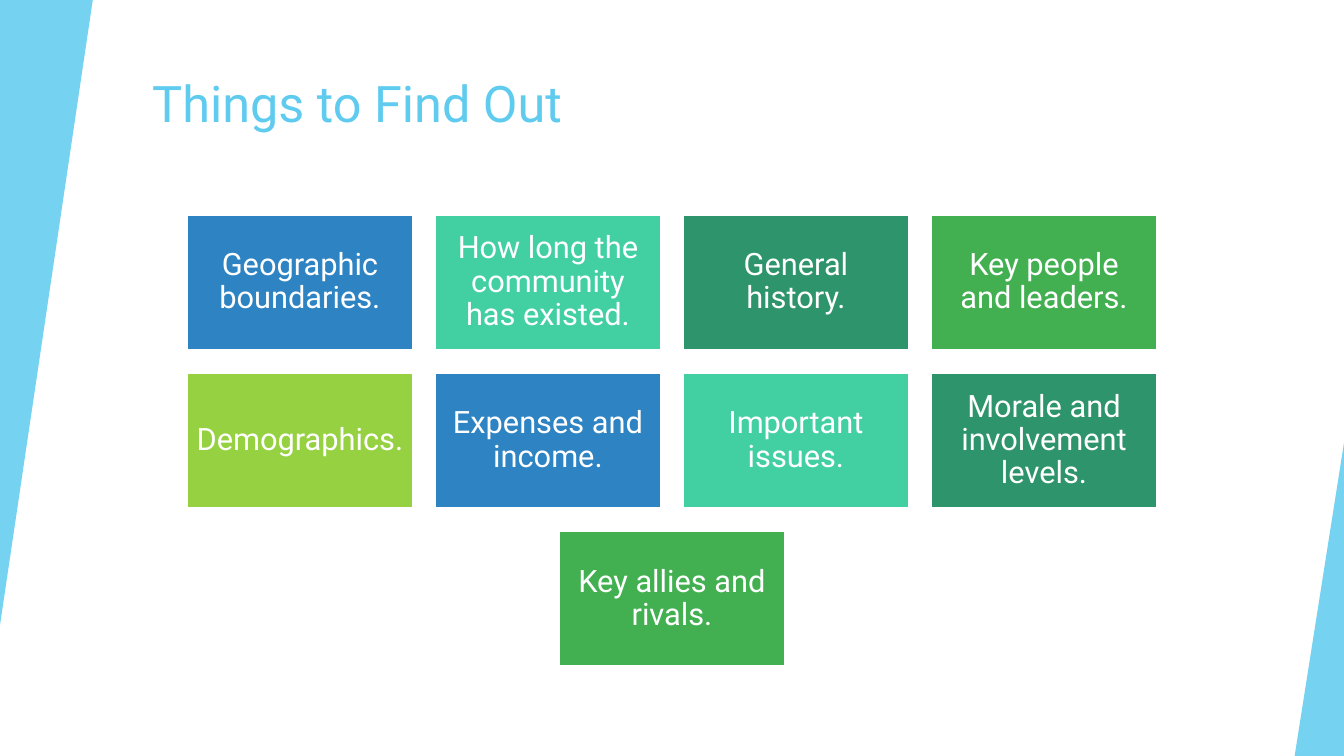
from dataclasses import dataclass

from lxml import etree
from pptx import Presentation
from pptx import util as u
from pptx.dml import color
from pptx.enum import shapes, text
from pptx.oxml import ns

FONT = "Roboto"
SKY = "5FCBEF"
WHITE = "FFFFFF"
SLIDE_WIDTH, SLIDE_HEIGHT = 13.33, 7.5
CARD_WIDTH, CARD_HEIGHT = 2.24, 1.34
COLUMN_PITCH, ROW_PITCH = 2.46, 1.57
GRID_TOP, COLUMNS = 2.13, 4
CARD_COLORS = ["2E83C3", "42D0A2", "2E946B", "42B051", "96D141"]
TOPICS = [
    "Geographic boundaries.",
    "How long the community has existed.",
    "General history.",
    "Key people and leaders.",
    "Demographics.",
    "Expenses and income.",
    "Important issues.",
    "Morale and involvement levels.",
    "Key allies and rivals.",
]


@dataclass
class Wedge:
    left: float
    top: float
    width: float
    height: float
    rotation: float


@dataclass
class Card:
    label: str
    fill: str
    left: float
    top: float


WEDGES = [Wedge(0, 0, 0.92, 6.2, 180), Wedge(12.84, 4.39, 0.49, 3.11, 0)]


def paint(target, hex_color: str) -> None:
    target.solid()
    target.fore_color.rgb = color.RGBColor.from_string(hex_color)


def write(frame, content: str, *, size: float, hex_color: str, align, anchor,
          inset: float, spacing: float = 1.0) -> None:
    frame.word_wrap = True
    frame.auto_size = text.MSO_AUTO_SIZE.NONE
    frame.vertical_anchor = anchor
    frame.margin_left = frame.margin_right = u.Inches(inset)
    frame.margin_top = frame.margin_bottom = u.Inches(inset)
    para = frame.paragraphs[0]
    para.alignment = align
    para.line_spacing = spacing
    span = para.add_run()
    span.text = content
    span.font.name = FONT
    span.font.size = u.Pt(size)
    paint(span.font.fill, hex_color)


def draw_title(page, content: str) -> None:
    title = page.shapes.title
    title.left, title.top = u.Inches(1.41), u.Inches(0.67)
    title.width, title.height = u.Inches(11.15), u.Inches(1.2)
    write(title.text_frame, content, size=36, hex_color=SKY, inset=0.1,
          align=text.PP_ALIGN.LEFT, anchor=text.MSO_ANCHOR.TOP)
    title.text_frame.margin_top = u.Inches(0.05)


def draw_wedge(page, wedge: Wedge) -> None:
    box = page.shapes.add_shape(
        shapes.MSO_SHAPE.ISOSCELES_TRIANGLE, u.Inches(wedge.left),
        u.Inches(wedge.top), u.Inches(wedge.width), u.Inches(wedge.height))
    box.adjustments[0] = 1
    box.rotation = wedge.rotation
    box.shadow.inherit = False
    box.line.fill.background()
    paint(box.fill, SKY)
    tint = box.fill._xPr.find(".//" + ns.qn("a:srgbClr"))
    etree.SubElement(tint, ns.qn("a:alpha"), val="85000")


def draw_card(page, card: Card) -> None:
    box = page.shapes.add_shape(
        shapes.MSO_SHAPE.RECTANGLE, u.Inches(card.left), u.Inches(card.top),
        u.Inches(CARD_WIDTH), u.Inches(CARD_HEIGHT))
    box.shadow.inherit = False
    paint(box.fill, card.fill)
    paint(box.line.fill, WHITE)
    box.line.width = u.Pt(1.5)
    write(box.text_frame, card.label, size=22, hex_color=WHITE, inset=0.09,
          align=text.PP_ALIGN.CENTER, anchor=text.MSO_ANCHOR.MIDDLE,
          spacing=0.9)


def lay_out_cards() -> list[Card]:
    cards = []
    for index, topic in enumerate(TOPICS):
        row, column = divmod(index, COLUMNS)
        count = min(COLUMNS, len(TOPICS) - row * COLUMNS)
        row_width = (count - 1) * COLUMN_PITCH + CARD_WIDTH
        left = (SLIDE_WIDTH - row_width) / 2 + column * COLUMN_PITCH
        fill = CARD_COLORS[index % len(CARD_COLORS)]
        cards.append(Card(topic, fill, left, GRID_TOP + row * ROW_PITCH))
    return cards


def main() -> None:
    deck = Presentation()
    deck.slide_width = u.Inches(SLIDE_WIDTH)
    deck.slide_height = u.Inches(SLIDE_HEIGHT)
    page = deck.slides.add_slide(deck.slide_layouts.get_by_name("Title Only"))
    paint(page.background.fill, WHITE)
    draw_title(page, "Things to Find Out")
    for wedge in WEDGES:
        draw_wedge(page, wedge)
    for card in lay_out_cards():
        draw_card(page, card)
    deck.save("out.pptx")


if __name__ == "__main__":
    main()
